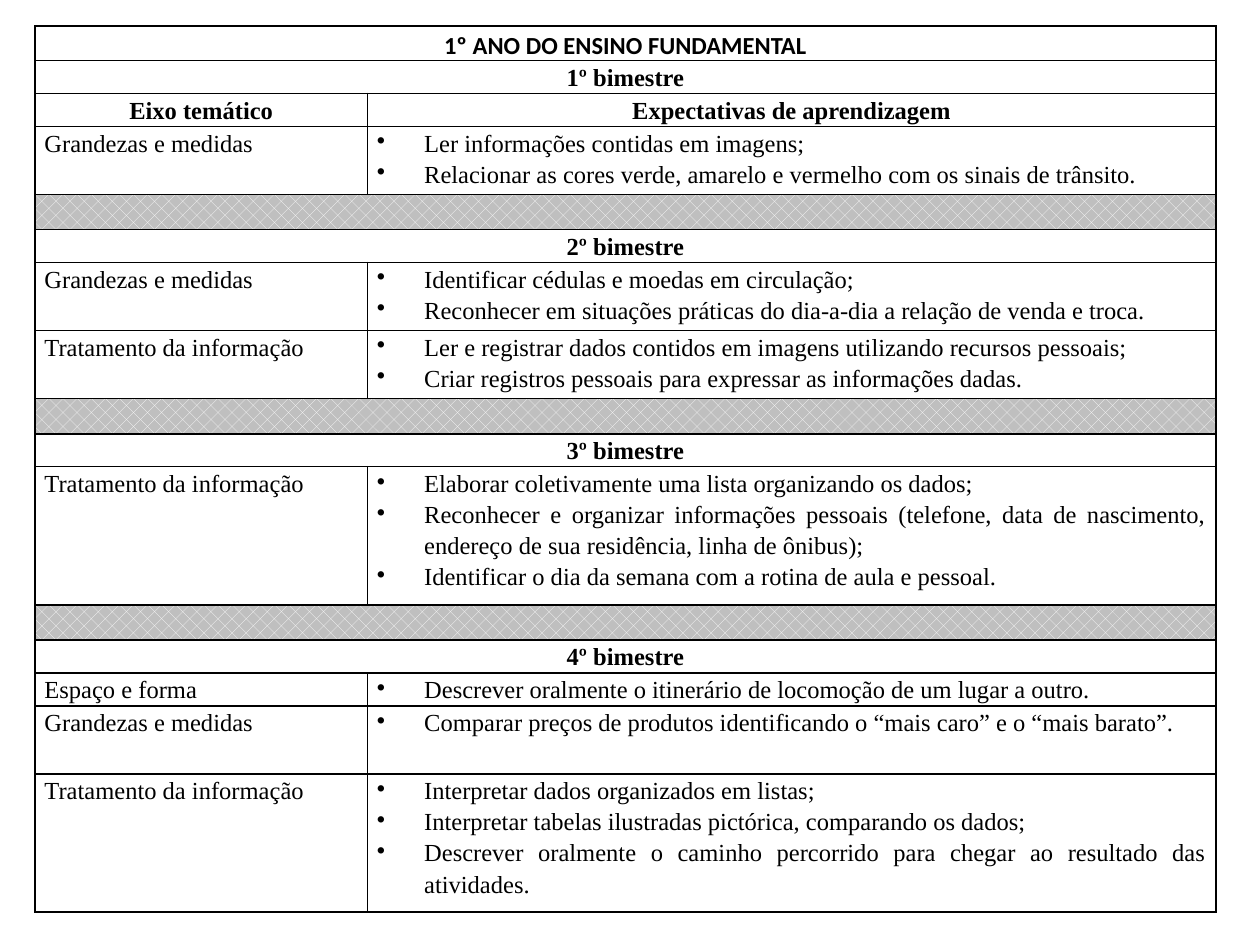
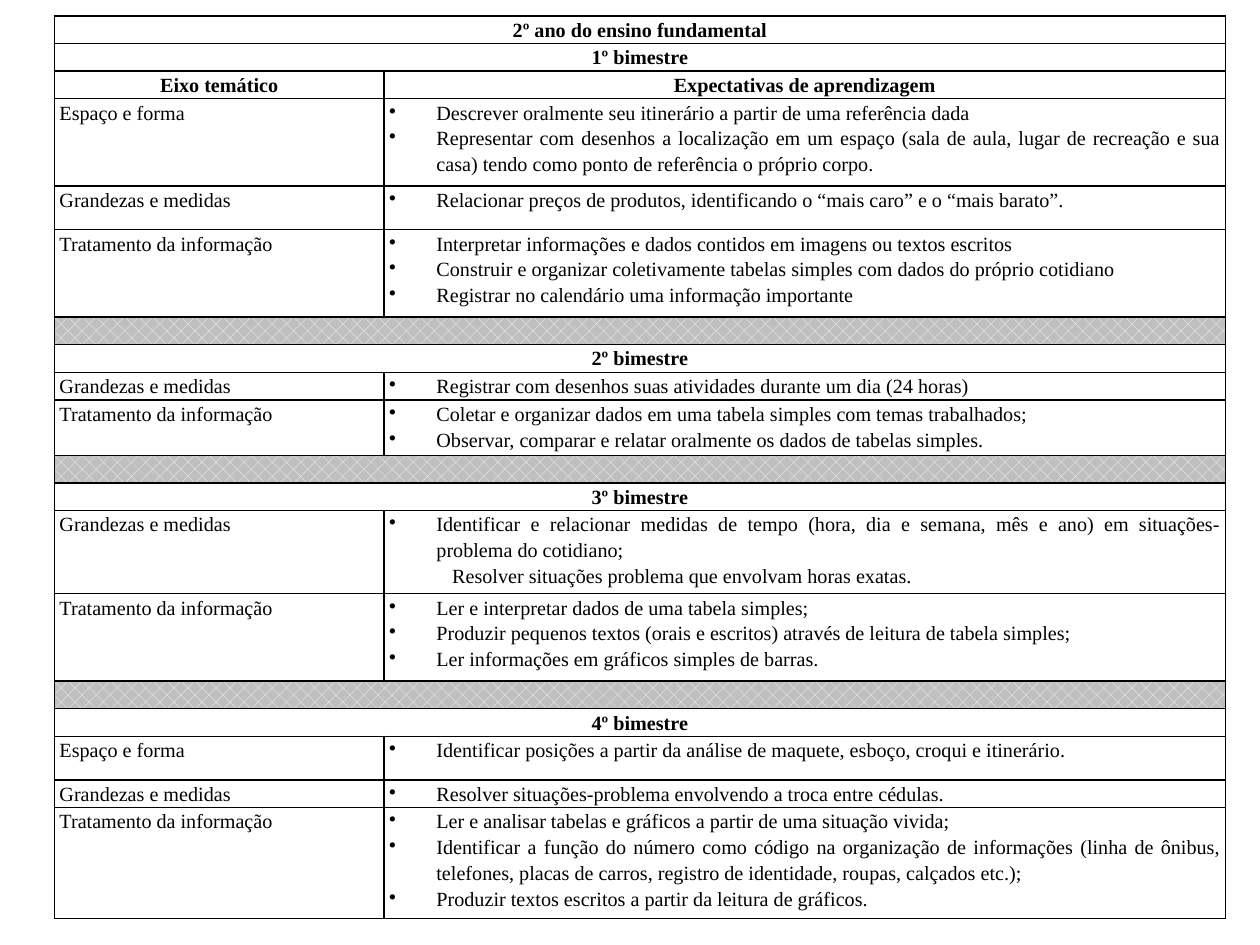
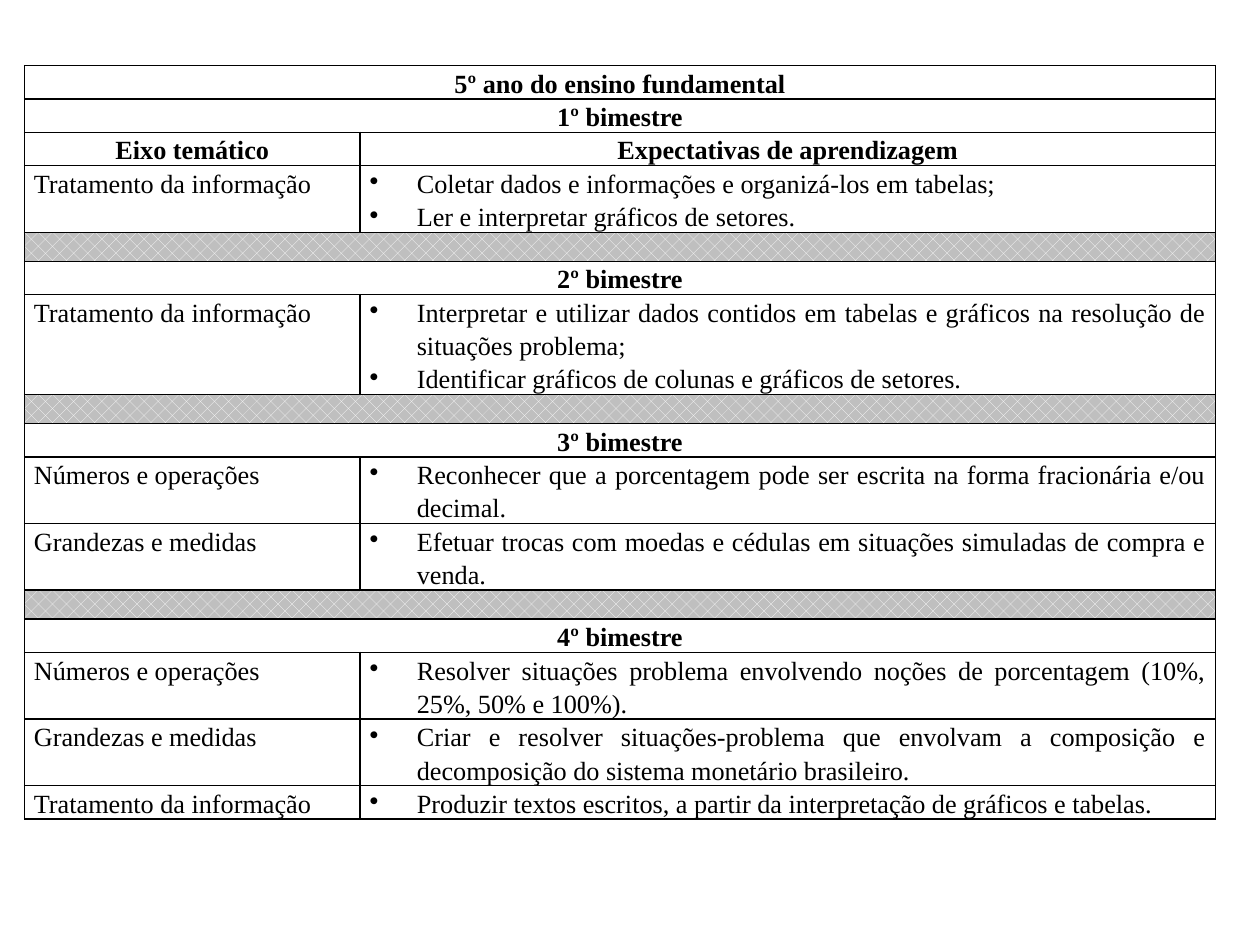
from lxml import etree
from pptx import Presentation
from pptx.dml.color import RGBColor
from pptx.enum import dml, text
from pptx.oxml.ns import qn
from pptx.util import Pt

COLORS = {"ink": "000000", "band": "BFBFBF", "band_dots": "FFFFFF"}
FONT = "Times New Roman"
HEADINGS = ("Eixo temático", "Expectativas de aprendizagem")
SPACE, NUMBERS = "Espaço e forma", "Números e operações"
MEASURES, DATA = "Grandezas e medidas", "Tratamento da informação"
HANGING, PLAIN_INDENT, SPACING = 27, 36, 1.15

# Shown indented, without a bullet
UNBULLETED = {"Resolver situações problema que envolvam horas exatas."}

# Each bimester is a list of (theme, row height, expectations).
YEARS = [
    {
        "title": "1º ANO DO ENSINO FUNDAMENTAL", "title_font": "Calibri",
        "size": 14, "left": 20, "top": 15, "cols": (190, 484.8), "inset": 5.4,
        "line": 18.8, "band": 20.1,
        "bimesters": [
            [(MEASURES, 38.9, [
                "Ler informações contidas em imagens;",
                "Relacionar as cores verde, amarelo e vermelho com os sinais de trânsito."])],
            [(MEASURES, 38.9, [
                "Identificar cédulas e moedas em circulação;",
                "Reconhecer em situações práticas do dia-a-dia a relação de venda e troca."]),
             (DATA, 38.9, [
                 "Ler e registrar dados contidos em imagens utilizando recursos pessoais;",
                 "Criar registros pessoais para expressar as informações dadas."])],
            [(DATA, 79, [
                "Elaborar coletivamente uma lista organizando os dados;",
                "Reconhecer e organizar informações pessoais (telefone, data de nascimento, "
                "endereço de sua residência, linha de ônibus);",
                "Identificar o dia da semana com a rotina de aula e pessoal."])],
            [(SPACE, 18.8, [
                "Descrever oralmente o itinerário de locomoção de um lugar a outro."]),
             (MEASURES, 38.9, [
                 "Comparar preços de produtos identificando o “mais caro” e o “mais barato”."]),
             (DATA, 79, [
                 "Interpretar dados organizados em listas;",
                 "Interpretar tabelas ilustradas pictórica, comparando os dados;",
                 "Descrever oralmente o caminho percorrido para chegar ao resultado das "
                 "atividades."])],
        ],
    },
    {
        "title": "2º ano do ensino fundamental", "title_font": FONT,
        "size": 11.5, "left": 31, "top": 9, "cols": (188.4, 480.8), "inset": 3,
        "line": 15.8, "band": 15.8,
        "bimesters": [
            [(SPACE, 49.9, [
                "Descrever oralmente seu itinerário a partir de uma referência dada",
                "Representar com desenhos a localização em um espaço (sala de aula, lugar de "
                "recreação e sua casa) tendo como ponto de referência o próprio corpo."]),
             (MEASURES, 25, [
                 "Relacionar preços de produtos, identificando o “mais caro” e o “mais barato”."]),
             (DATA, 49.9, [
                 "Interpretar informações e dados contidos em imagens ou textos escritos",
                 "Construir e organizar coletivamente tabelas simples com dados do próprio "
                 "cotidiano",
                 "Registrar no calendário uma informação importante"])],
            [(MEASURES, 15.8, [
                "Registrar com desenhos suas atividades durante um dia (24 horas)"]),
             (DATA, 31.7, [
                 "Coletar e organizar dados em uma tabela simples com temas trabalhados;",
                 "Observar, comparar e relatar oralmente os dados de tabelas simples."])],
            [(MEASURES, 47.5, [
                "Identificar e relacionar medidas de tempo (hora, dia e semana, mês e ano) em "
                "situações-problema do cotidiano;",
                "Resolver situações problema que envolvam horas exatas."]),
             (DATA, 49.9, [
                 "Ler e interpretar dados de uma tabela simples;",
                 "Produzir pequenos textos (orais e escritos) através de leitura de tabela "
                 "simples;",
                 "Ler informações em gráficos simples de barras."])],
            [(SPACE, 25, [
                "Identificar posições a partir da análise de maquete, esboço, croqui e "
                "itinerário."]),
             (MEASURES, 15.8, [
                 "Resolver situações-problema envolvendo a troca entre cédulas."]),
             (DATA, 63.4, [
                 "Ler e analisar tabelas e gráficos a partir de uma situação vivida;",
                 "Identificar a função do número como código na organização de informações "
                 "(linha de ônibus, telefones, placas de carros, registro de identidade, "
                 "roupas, calçados etc.);",
                 "Produzir textos escritos a partir da leitura de gráficos."])],
        ],
    },
    {
        "title": "5º ano do ensino fundamental", "title_font": FONT,
        "size": 15, "left": 14, "top": 37.5, "cols": (191.8, 488.8), "inset": 5.4,
        "line": 19, "band": 16.6,
        "bimesters": [
            [(DATA, 38, [
                "Coletar dados e informações e organizá-los em tabelas;",
                "Ler e interpretar gráficos de setores."])],
            [(DATA, 57, [
                "Interpretar e utilizar dados contidos em tabelas e gráficos na resolução de "
                "situações problema;",
                "Identificar gráficos de colunas e gráficos de setores."])],
            [(NUMBERS, 38, [
                "Reconhecer que a porcentagem pode ser escrita na forma fracionária e/ou "
                "decimal."]),
             (MEASURES, 38, [
                 "Efetuar trocas com moedas e cédulas em situações simuladas de compra e "
                 "venda."])],
            [(NUMBERS, 38, [
                "Resolver situações problema envolvendo noções de porcentagem (10%, 25%, 50% "
                "e 100%)."]),
             (MEASURES, 38, [
                 "Criar e resolver situações-problema que envolvam a composição e "
                 "decomposição do sistema monetário brasileiro."]),
             (DATA, 19, [
                 "Produzir textos escritos, a partir da interpretação de gráficos e "
                 "tabelas."])],
        ],
    },
]


def rgb(name):
    return RGBColor.from_string(COLORS[name])


def set_all(obj, values):
    for name, value in values.items():
        setattr(obj, name, value)


def plan_rows(year):
    """Return (kind, height, content) for every table row."""
    line = year["line"]
    rows = [("title", line, year["title"])]
    for n, themes in enumerate(year["bimesters"], 1):
        if n > 1:
            rows.append(("band", year["band"], None))
        rows.append(("bimester", line, f"{n}º bimestre"))
        if n == 1:
            rows.append(("headings", line, HEADINGS))
        rows += [("theme", height, (theme, items)) for theme, height, items in themes]
    return rows


def prepare_cell(cell, inset):
    """Set margins, a thin border on every side and no fill."""
    set_all(cell, {"margin_left": Pt(inset), "margin_right": Pt(inset),
                   "margin_top": 0, "margin_bottom": 0})
    tcPr = cell._tc.get_or_add_tcPr()
    for side in ("a:lnL", "a:lnR", "a:lnT", "a:lnB"):
        ln = etree.SubElement(tcPr, qn(side), w=str(Pt(1)))
        fill = etree.SubElement(ln, qn("a:solidFill"))
        etree.SubElement(fill, qn("a:srgbClr"), val=COLORS["ink"])
    cell.fill.background()


def write(cell, lines, size, font=FONT, bold=False, listed=False):
    tf = cell.text_frame
    for i, line in enumerate(lines):
        p = tf.add_paragraph() if i else tf.paragraphs[0]
        align = text.PP_ALIGN.CENTER if bold else text.PP_ALIGN.JUSTIFY
        set_all(p, {"alignment": align, "line_spacing": SPACING})
        r = p.add_run()
        r.text = line
        set_all(r.font, {"name": font, "size": Pt(size), "bold": bold})
        r.font.color.rgb = rgb("ink")
        if listed:
            pPr = p._p.get_or_add_pPr()
            bulleted = line not in UNBULLETED
            pPr.set("marL", str(Pt(HANGING if bulleted else PLAIN_INDENT)))
            pPr.set("indent", str(Pt(-HANGING if bulleted else 0)))
            if bulleted:
                etree.SubElement(pPr, qn("a:buChar"), char="•")


def shade(cell, size):
    """Fill a separator row, keeping its empty line as small as the text."""
    cell.fill.patterned()
    cell.fill.pattern = dml.MSO_PATTERN.PERCENT_25
    cell.fill.fore_color.rgb = rgb("band_dots")
    cell.fill.back_color.rgb = rgb("band")
    end = etree.SubElement(cell.text_frame.paragraphs[0]._p, qn("a:endParaRPr"),
                           sz=str(int(size * 100)))
    etree.SubElement(end, qn("a:latin"), typeface=FONT)


def add_year(prs, year):
    s = prs.slides.add_slide(prs.slide_layouts[6])
    rows, cols, size = plan_rows(year), year["cols"], year["size"]
    table = s.shapes.add_table(
        len(rows), len(cols), Pt(year["left"]), Pt(year["top"]),
        Pt(sum(cols)), Pt(sum(height for _, height, _ in rows))).table
    set_all(table, {"first_row": False, "horz_banding": False})
    for col, width in zip(table.columns, cols):
        col.width = Pt(width)
    for i, (kind, height, content) in enumerate(rows):
        table.rows[i].height = Pt(height)
        left, right = table.cell(i, 0), table.cell(i, 1)
        for cell in (left, right):
            prepare_cell(cell, year["inset"])
        if kind == "headings":
            for cell, heading in zip((left, right), content):
                write(cell, [heading], size, bold=True)
        elif kind == "theme":
            theme, items = content
            write(left, [theme], size)
            write(right, items, size, listed=True)
        else:
            left.merge(right)
            if kind == "band":
                shade(left, size)
            else:
                font = year["title_font"] if kind == "title" else FONT
                write(left, [content], size, font, bold=True)


def main():
    prs = Presentation()
    set_all(prs, {"slide_width": Pt(720), "slide_height": Pt(540)})
    for year in YEARS:
        add_year(prs, year)
    prs.save("out.pptx")


if __name__ == "__main__":
    main()
